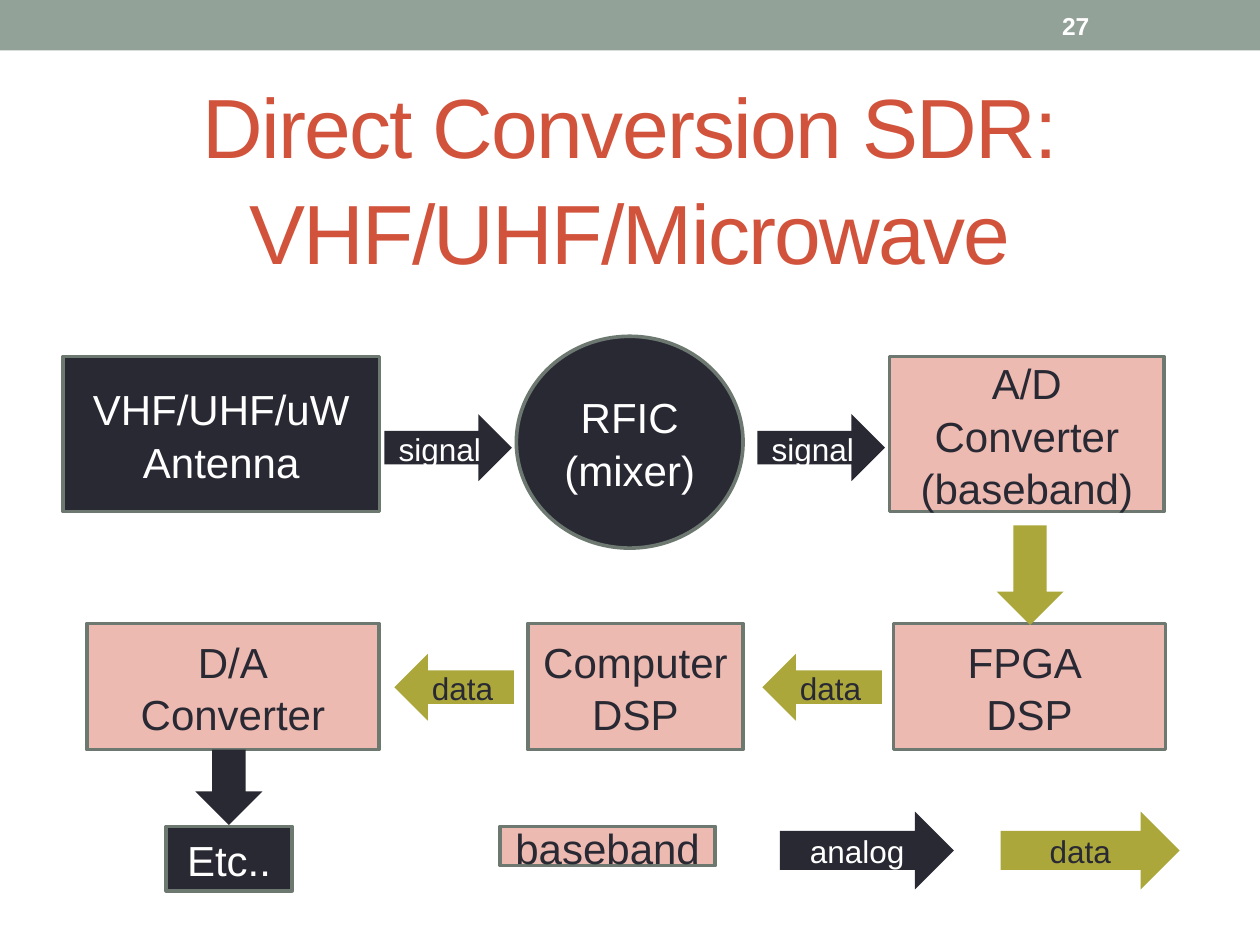
from dataclasses import dataclass

from pptx import Presentation
from pptx.dml.color import RGBColor
from pptx.enum.shapes import MSO_SHAPE
from pptx.enum.text import MSO_ANCHOR, PP_ALIGN
from pptx.util import Cm, Pt


@dataclass(frozen=True)
class Theme:
    font: str = "Arial"
    header: str = "93A299"
    title: str = "D2533C"
    dark: str = "292934"
    light: str = "FFFFFF"
    baseband: str = "EDBAB1"
    data: str = "ACA73B"
    border: str = "6D7871"
    border_width: float = 2.08
    title_size: int = 48
    block_size: int = 24
    arrow_size: int = 18
    number_size: int = 14
    line_spacing: float = 1.05


THEME = Theme()
ARROW_BREADTH = 1.35


def place(box, left, top, width, height):
    """Turn a position inside a region into slide lengths."""
    return Cm(box[0] + left), Cm(box[1] + top), Cm(width), Cm(height)


def write(shape, text, size, color, alignment=PP_ALIGN.CENTER, bold=False, spacing=0):
    frame = shape.text_frame
    frame.word_wrap = True
    frame.vertical_anchor = MSO_ANCHOR.MIDDLE
    frame.text = text
    for paragraph in frame.paragraphs:
        paragraph.alignment = alignment
        paragraph.line_spacing = THEME.line_spacing
        for run in paragraph.runs:
            run.font.name = THEME.font
            run.font.size = Pt(size)
            run.font.bold = bold
            run.font.color.rgb = RGBColor.from_string(color)
            if spacing:
                run.font._element.set("spc", str(spacing))


def add_filled(slide, kind, position, fill):
    shape = slide.shapes.add_shape(kind, *position)
    shape.shadow.inherit = False
    shape.fill.solid()
    shape.fill.fore_color.rgb = RGBColor.from_string(fill)
    shape.line.fill.background()
    return shape


def text_color(fill):
    return THEME.light if fill == THEME.dark else THEME.dark


def add_block(slide, position, text, fill, kind=MSO_SHAPE.RECTANGLE):
    shape = add_filled(slide, kind, position, fill)
    shape.line.color.rgb = RGBColor.from_string(THEME.border)
    shape.line.width = Pt(THEME.border_width)
    write(shape, text, THEME.block_size, text_color(fill))


def add_arrow(slide, position, fill, kind=MSO_SHAPE.RIGHT_ARROW, text=""):
    shape = add_filled(slide, kind, position, fill)
    if text:
        write(shape, text, THEME.arrow_size, text_color(fill))


def add_header(slide, box):
    add_filled(slide, MSO_SHAPE.RECTANGLE, place(box, 0, 0, 25.4, 1.02), THEME.header)
    number = slide.shapes.add_textbox(*place(box, 21.16, 0.05, 2.97, 0.91))
    write(number, "27", THEME.number_size, THEME.light, PP_ALIGN.LEFT, bold=True)


def add_title(slide, box):
    title = slide.shapes.add_textbox(*place(box, 0, 0, 22.86, 4.8))
    write(title, "Direct Conversion SDR:\nVHF/UHF/Microwave",
          THEME.title_size, THEME.title, spacing=-100)


def add_receive_row(slide, box):
    add_block(slide, place(box, 0, 0.41, 6.38, 3.12), "VHF/UHF/uW Antenna", THEME.dark)
    add_block(slide, place(box, 9.14, 0, 4.57, 4.27), "RFIC\n(mixer)",
              THEME.dark, MSO_SHAPE.OVAL)
    add_block(slide, place(box, 16.66, 0.41, 5.54, 3.12),
              "A/D Converter\n(baseband)", THEME.baseband)
    for left in (6.48, 14):
        add_arrow(slide, place(box, left, 1.57, 2.57, ARROW_BREADTH),
                  THEME.dark, text="signal")


def add_processing_row(slide, box):
    blocks = ((0, 5.89, "D/A\nConverter"),
              (8.89, 4.34, "Computer \nDSP"),
              (16.26, 5.49, "FPGA \nDSP"))
    for left, width, text in blocks:
        add_block(slide, place(box, left, 0, width, 2.54), text, THEME.baseband)
    for left in (6.2, 13.62):
        add_arrow(slide, place(box, left, 0.61, 2.41, ARROW_BREADTH),
                  THEME.data, MSO_SHAPE.LEFT_ARROW, "data")
    # Incoming data from the converter above
    add_arrow(slide, place(box, 18.34, -1.98, ARROW_BREADTH, 2.01),
              THEME.data, MSO_SHAPE.DOWN_ARROW)


def add_output(slide, box):
    add_arrow(slide, place(box, 0.59, 0, ARROW_BREADTH, 1.52),
              THEME.dark, MSO_SHAPE.DOWN_ARROW)
    add_block(slide, place(box, 0, 1.55, 2.54, 1.3), "Etc..", THEME.dark)


def add_legend(slide, box):
    add_block(slide, place(box, 0, 0.3, 4.34, 0.79), "baseband", THEME.baseband)
    add_arrow(slide, place(box, 5.64, 0, 3.51, 1.57), THEME.dark, text="analog")
    add_arrow(slide, place(box, 10.09, 0, 3.61, 1.57), THEME.data, text="data")


def main():
    presentation = Presentation()
    presentation.slide_width, presentation.slide_height = Cm(25.4), Cm(19.05)
    slide = presentation.slides.add_slide(presentation.slide_layouts[6])

    # Each region gets its left and top corner in centimetres
    add_header(slide, (0, 0))
    add_title(slide, (1.27, 1.14))
    add_receive_row(slide, (1.27, 6.78))
    add_processing_row(slide, (1.75, 12.57))
    add_output(slide, (3.35, 15.11))
    add_legend(slide, (10.08, 16.36))

    presentation.save("out.pptx")


if __name__ == "__main__":
    main()
